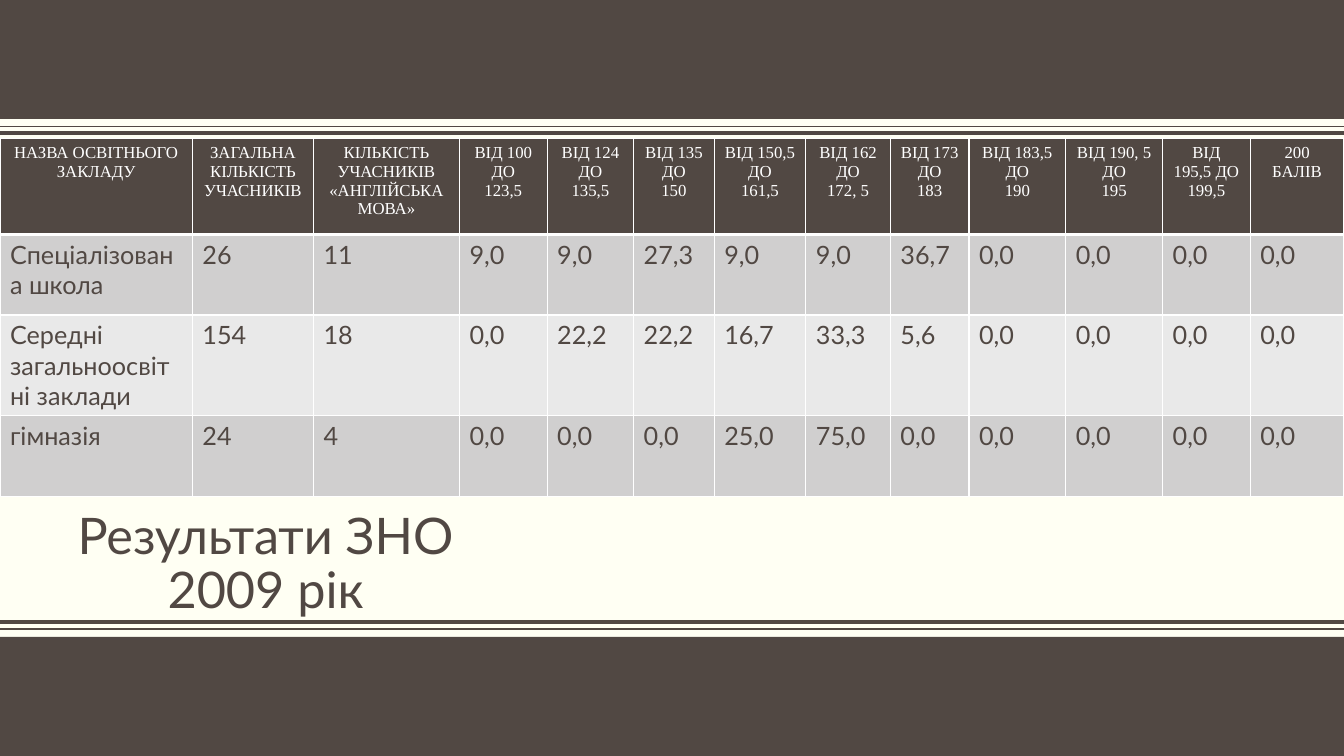
from dataclasses import dataclass

from lxml.etree import SubElement
from pptx import Presentation
from pptx.dml.color import RGBColor
from pptx.enum.shapes import MSO_CONNECTOR as Connector, MSO_SHAPE as Shape
from pptx.enum.text import MSO_ANCHOR as Anchor, PP_ALIGN as Align
from pptx.oxml.ns import qn
from pptx.util import Cm, Pt


@dataclass(frozen=True)
class Theme:
    paper: str = "FFFFF3"
    dark: str = "514843"
    white: str = "FFFFFF"
    odd_row: str = "D0CFCF"
    even_row: str = "E9E9E9"
    body_font: str = "Lato"
    header_font: str = "Times New Roman"
    title_size: int = 36
    body_size: int = 18
    header_size: int = 12


@dataclass(frozen=True)
class Rule:
    y: float
    weight: float


@dataclass(frozen=True)
class Column:
    header: str
    width: float
    values: tuple[str, str, str]


THEME = Theme()
WIDTH, HEIGHT = 33.87, 19.05
BAND_HEIGHT = 3.0
RULES = [Rule(3.18, 1), Rule(3.35, 3), Rule(15.67, 3), Rule(15.85, 1)]
ROW_HEIGHTS = [2.41, 2.03, 2.03, 2.03]
COLUMNS = [
    Column("НАЗВА ОСВІТНЬОГО ЗАКЛАДУ", 4.85,
           ("Спеціалізована школа", "Середні загальноосвітні заклади", "гімназія")),
    Column("ЗАГАЛЬНА КІЛЬКІСТЬ\nУЧАСНИКІВ", 3.05, ("26", "154", "24")),
    Column("КІЛЬКІСТЬ УЧАСНИКІВ «АНГЛІЙСЬКА МОВА»", 3.68, ("11", "18", "4")),
    Column("ВІД 100\nДО\n123,5", 2.21, ("9,0", "0,0", "0,0")),
    Column("ВІД 124 ДО\n135,5", 2.18, ("9,0", "22,2", "0,0")),
    Column("ВІД 135 ДО\n150", 2.03, ("27,3", "22,2", "0,0")),
    Column("ВІД 150,5 ДО\n161,5", 2.31, ("9,0", "16,7", "25,0")),
    Column("ВІД 162 ДО\n172, 5", 2.13, ("9,0", "33,3", "75,0")),
    Column("ВІД 173 ДО\n183", 1.98, ("36,7", "5,6", "0,0")),
    Column("ВІД 183,5 ДО\n190", 2.44, ("0,0", "0,0", "0,0")),
    Column("ВІД 190, 5 ДО\n195", 2.44, ("0,0", "0,0", "0,0")),
    Column("ВІД 195,5 ДО\n199,5", 2.21, ("0,0", "0,0", "0,0")),
    Column("200 БАЛІВ", 2.36, ("0,0", "0,0", "0,0")),
]


def rgb(color: str) -> RGBColor:
    return RGBColor.from_string(color)


def write(tf, text: str, *, size: float, color: str = THEME.dark,
          font: str = THEME.body_font, align=Align.LEFT, spacing: float = 1.0) -> None:
    """Put each line of text in its own paragraph; a vertical tab breaks a line."""
    tf.word_wrap = True
    for i, line in enumerate(text.split("\n")):
        p = tf.paragraphs[0] if i == 0 else tf.add_paragraph()
        p.text = line
        p.alignment = align
        p.line_spacing = spacing
        for r in p.runs:
            r.font.size = Pt(size)
            r.font.name = font
            r.font.color.rgb = rgb(color)


def add_band(slide, top: float) -> None:
    sp = slide.shapes.add_shape(Shape.RECTANGLE, 0, Cm(top), Cm(WIDTH), Cm(BAND_HEIGHT))
    sp.shadow.inherit = False
    sp.fill.solid()
    sp.fill.fore_color.rgb = rgb(THEME.dark)
    sp.line.fill.background()


def add_rule(slide, rule: Rule) -> None:
    line = slide.shapes.add_connector(Connector.STRAIGHT, 0, Cm(rule.y), Cm(WIDTH), Cm(rule.y))
    line.line.color.rgb = rgb(THEME.dark)
    line.line.width = Pt(rule.weight)
    SubElement(line._element.spPr, qn("a:effectLst"))


def style_cell(cell, fill: str, top: float = 1, bottom: float = 1) -> None:
    """Fill the cell and edge it in white, with weights in points."""
    tc_pr = cell._tc.get_or_add_tcPr()
    for side, weight in (("L", 1), ("R", 1), ("T", top), ("B", bottom)):
        ln = SubElement(tc_pr, qn(f"a:ln{side}"), w=str(Pt(weight)))
        SubElement(SubElement(ln, qn("a:solidFill")), qn("a:srgbClr"), val=THEME.white)
    cell.fill.solid()
    cell.fill.fore_color.rgb = rgb(fill)


def add_results(slide) -> None:
    table = slide.shapes.add_table(len(ROW_HEIGHTS), len(COLUMNS), 0, Cm(3.5),
                                   Cm(WIDTH), Cm(sum(ROW_HEIGHTS))).table
    for row, height in zip(table.rows, ROW_HEIGHTS):
        row.height = Cm(height)
    for c, column in enumerate(COLUMNS):
        table.columns[c].width = Cm(column.width)
        header = table.cell(0, c)
        write(header.text_frame, column.header, size=THEME.header_size,
              color=THEME.white, font=THEME.header_font, align=Align.CENTER)
        style_cell(header, THEME.dark, bottom=3)
        for r, value in enumerate(column.values, start=1):
            cell = table.cell(r, c)
            write(cell.text_frame, value, size=THEME.body_size)
            style_cell(cell, THEME.odd_row if r % 2 else THEME.even_row,
                       top=3 if r == 1 else 1)


def add_title(slide) -> None:
    box = slide.shapes.add_textbox(Cm(0.74), Cm(12.75), Cm(11.91), Cm(2.67))
    tf = box.text_frame
    tf.margin_left = tf.margin_right = 0
    tf.vertical_anchor = Anchor.TOP
    write(tf, "Результати ЗНО\v2009 рік", size=THEME.title_size,
          align=Align.CENTER, spacing=0.9)


def main() -> None:
    prs = Presentation()
    prs.slide_width, prs.slide_height = Cm(WIDTH), Cm(HEIGHT)
    slide = prs.slides.add_slide(prs.slide_layouts[6])
    slide.background.fill.solid()
    slide.background.fill.fore_color.rgb = rgb(THEME.paper)
    for rule in RULES:
        add_rule(slide, rule)
    for top in (0, HEIGHT - BAND_HEIGHT):
        add_band(slide, top)
    add_title(slide)
    add_results(slide)
    prs.save("out.pptx")


if __name__ == "__main__":
    main()
